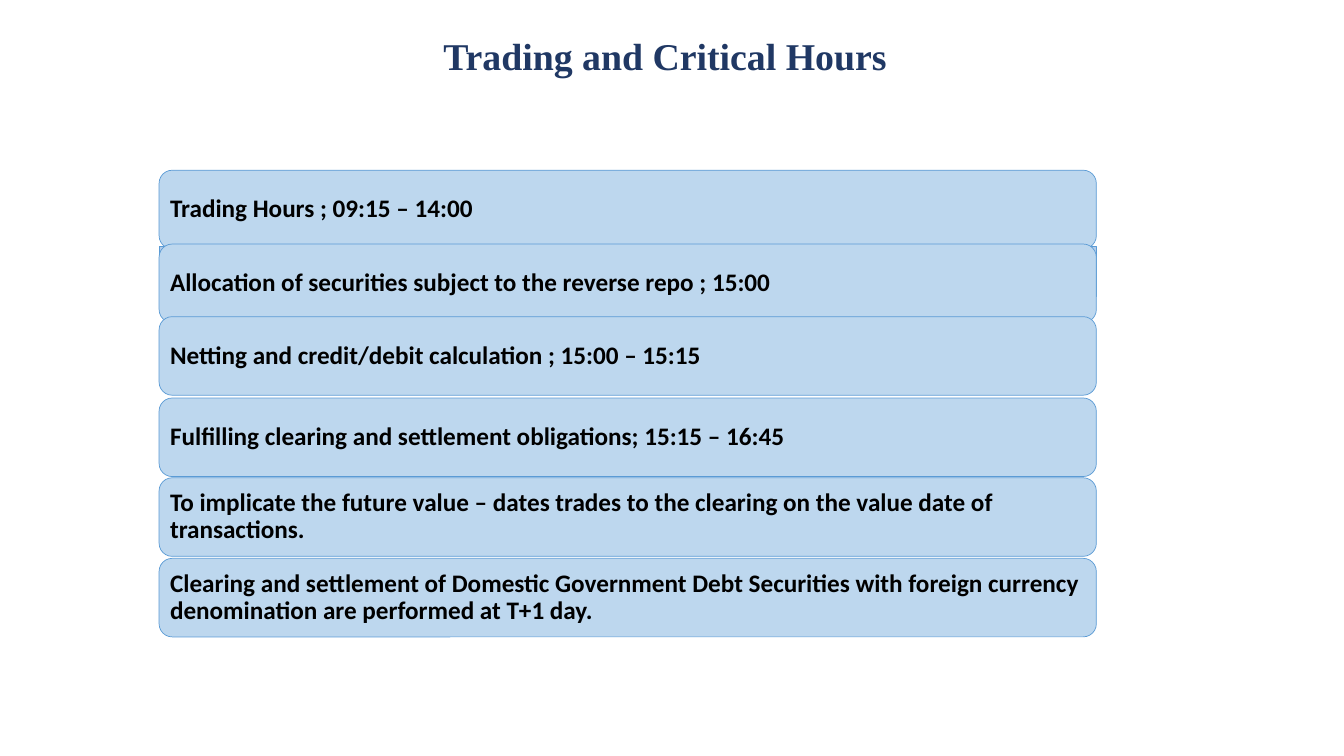
from dataclasses import dataclass

from pptx import Presentation
from pptx.dml.color import RGBColor
from pptx.enum.shapes import MSO_SHAPE
from pptx.enum.text import MSO_ANCHOR, PP_ALIGN
from pptx.shapes.autoshape import Shape
from pptx.slide import Slide
from pptx.util import Cm, Pt

ROUNDED = MSO_SHAPE.ROUNDED_RECTANGLE
RECTANGLE = MSO_SHAPE.RECTANGLE
MIDDLE = MSO_ANCHOR.MIDDLE
LEFT = PP_ALIGN.LEFT
CENTER = PP_ALIGN.CENTER

COLORS = {
    "title": "203864",
    "text": "000000",
    "bar": "BDD7EE",
    "outline": "5B9BD5",
    "gradient_top": "B1CBE9",
    "gradient_bottom": "93B9E4",
}
BAR_LEFT, BAR_WIDTH, BAR_HEIGHT = 4.01, 23.62, 1.98
BAR_INSET = 0.18


@dataclass
class HoursBar:
    top: float
    text: str


BARS = [
    HoursBar(4.29, "Trading Hours ; 09:15 – 14:00"),
    HoursBar(6.15, "Allocation of securities subject to the reverse repo ; 15:00"),
    HoursBar(7.98, "Netting and credit/debit calculation ; 15:00 – 15:15"),
    HoursBar(10.03, "Fulfilling clearing and settlement obligations; 15:15 – 16:45"),
    HoursBar(12.04, "To implicate the future value – dates trades to the clearing "
                    "on the value date of transactions."),
    HoursBar(14.07, "Clearing and settlement of Domestic Government Debt Securities "
                    "with foreign currency denomination are performed at T+1 day."),
]


def color(name: str) -> RGBColor:
    return RGBColor.from_string(COLORS[name])


def write_text(shape: Shape, text: str, *, font: str, size: float, color_name: str,
               align: PP_ALIGN, inset: float, line_spacing: float = 1.0) -> None:
    """Fill the shape with one bold, vertically centred paragraph."""
    frame = shape.text_frame
    frame.word_wrap = True
    frame.vertical_anchor = MIDDLE
    frame.margin_left = frame.margin_right = Cm(inset)
    frame.margin_top = frame.margin_bottom = Cm(inset)
    paragraph = frame.paragraphs[0]
    paragraph.alignment = align
    paragraph.line_spacing = line_spacing
    run = paragraph.add_run()
    run.text = text
    run.font.name = font
    run.font.size = Pt(size)
    run.font.bold = True
    run.font.color.rgb = color(color_name)


def add_outlined_shape(slide: Slide, kind: MSO_SHAPE, top: float, height: float) -> Shape:
    shape = slide.shapes.add_shape(kind, Cm(BAR_LEFT), Cm(top), Cm(BAR_WIDTH), Cm(height))
    shape.shadow.inherit = False
    shape.line.color.rgb = color("outline")
    shape.line.width = Pt(0.5)
    return shape


def add_title(slide: Slide) -> None:
    title = slide.shapes.add_textbox(Cm(5.33), Cm(0.69), Cm(22.86), Cm(1.4))
    write_text(title, "Trading and Critical Hours", font="Times New Roman", size=27,
               color_name="title", align=CENTER, inset=0.13)


def add_gradient_strip(slide: Slide) -> None:
    strip = add_outlined_shape(slide, RECTANGLE, 6.22, 1.24)
    strip.fill.gradient()
    strip.fill.gradient_angle = 270
    for stop, name in zip(strip.fill.gradient_stops, ("gradient_top", "gradient_bottom")):
        stop.color.rgb = color(name)


def add_bar(slide: Slide, bar: HoursBar) -> None:
    shape = add_outlined_shape(slide, ROUNDED, bar.top, BAR_HEIGHT)
    shape.fill.solid()
    shape.fill.fore_color.rgb = color("bar")
    write_text(shape, bar.text, font="Calibri", size=18, color_name="text",
               align=LEFT, inset=BAR_INSET, line_spacing=0.9)


def main() -> None:
    presentation = Presentation()
    presentation.slide_width = Cm(33.87)
    presentation.slide_height = Cm(19.05)
    slide = presentation.slides.add_slide(presentation.slide_layouts[6])
    add_title(slide)
    add_bar(slide, BARS[0])
    add_gradient_strip(slide)
    for bar in BARS[1:]:
        add_bar(slide, bar)
    presentation.save("out.pptx")


if __name__ == "__main__":
    main()
